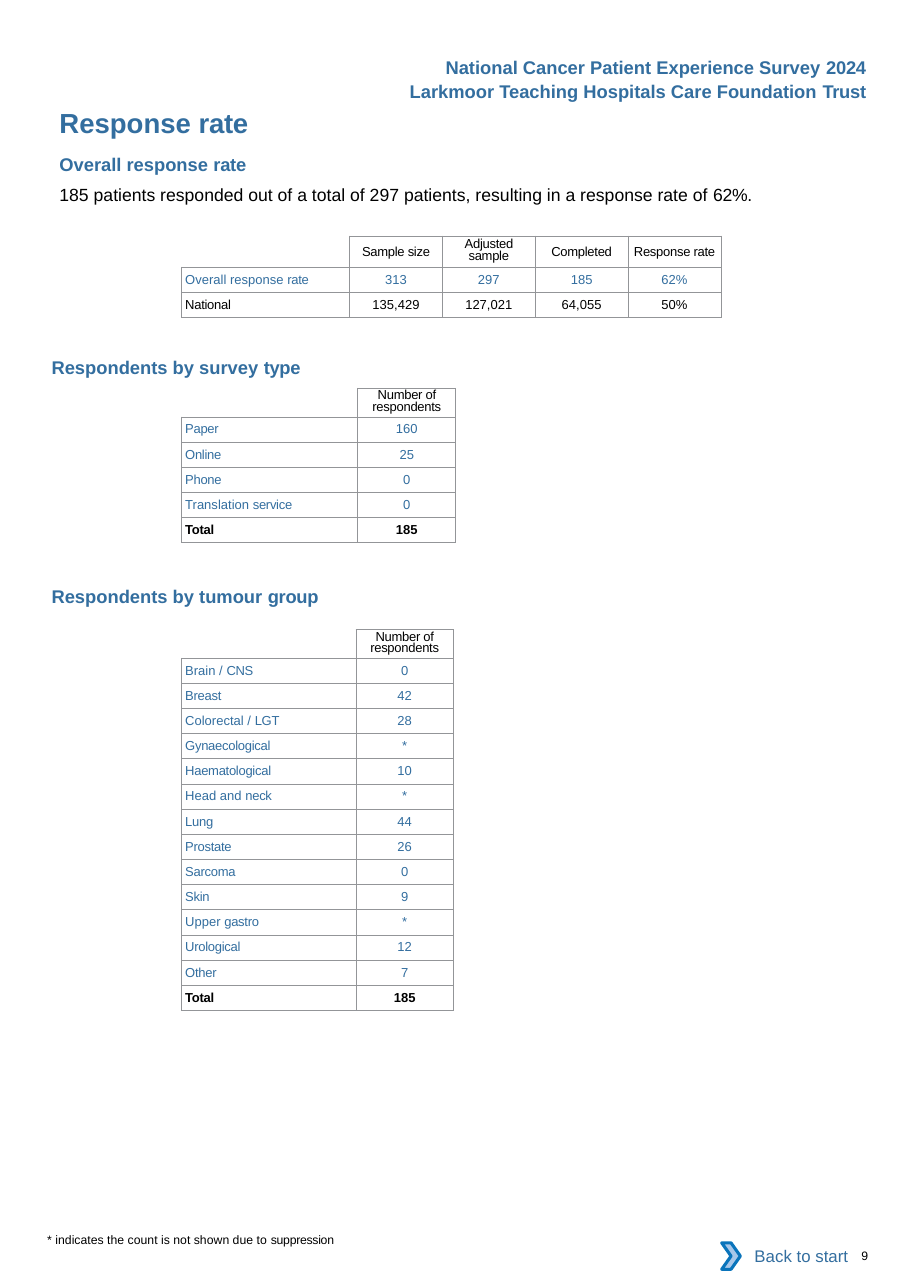
from dataclasses import dataclass, replace

from lxml.etree import SubElement
from pptx import Presentation
from pptx.dml.color import RGBColor
from pptx.enum.shapes import MSO_SHAPE as Preset
from pptx.enum.text import MSO_ANCHOR as Anchor, PP_ALIGN as Align
from pptx.oxml.ns import qn
from pptx.util import Cm, Pt

BLUE = RGBColor(0x33, 0x6E, 0x9F)
BLACK = RGBColor(0x00, 0x00, 0x00)
WHITE = RGBColor(0xFF, 0xFF, 0xFF)
BORDER_GREY = RGBColor(0x93, 0x95, 0x98)
CHEVRON_FILL = RGBColor(0xA8, 0xC7, 0xE9)
CHEVRON_LINE = RGBColor(0x0A, 0x74, 0xBB)

FONT = "Arial"
TIGHT = -20  # hundredths of a point
TABLE_LEFT = 4.19
ROW_HEIGHT = 0.58


@dataclass(frozen=True)
class Style:
    size: float
    color: RGBColor = BLACK
    bold: bool = False


TITLE = Style(18, BLUE, True)
HEADING = Style(12, BLUE, True)
SENTENCE = Style(11.5)
SMALL = Style(8)
LINK = Style(11, BLUE)
CELL = Style(8.5)
TRUST_CELL = replace(CELL, color=BLUE)
TOTAL_CELL = replace(CELL, bold=True)

OVERALL_HEADER = ["Sample size", "Adjusted sample", "Completed", "Response rate"]
OVERALL_ROWS = [
    (TRUST_CELL, "Overall response rate", "313", "297", "185", "62%"),
    (CELL, "National", "135,429", "127,021", "64,055", "50%"),
]
COUNT_HEADER = ["Number of respondents"]
TWO_LINE_HEADERS = {"Adjusted sample", "Number of respondents"}
SURVEY_TYPES = [
    ("Paper", "160"), ("Online", "25"), ("Phone", "0"), ("Translation service", "0"),
]
TUMOUR_GROUPS = [
    ("Brain / CNS", "0"), ("Breast", "42"), ("Colorectal / LGT", "28"),
    ("Gynaecological", "*"), ("Haematological", "10"), ("Head and neck", "*"),
    ("Lung", "44"), ("Prostate", "26"), ("Sarcoma", "0"), ("Skin", "9"),
    ("Upper gastro", "*"), ("Urological", "12"), ("Other", "7"),
]


def add_span(para, text, style, spacing=0):
    span = para.add_run()
    span.text = text
    span.font.name = FONT
    span.font.size = Pt(style.size)
    span.font.bold = style.bold
    span.font.color.rgb = style.color
    if spacing:
        span.font._element.set("spc", str(spacing))


def add_label(para, text, style):
    """Add text whose last word is set slightly tighter."""
    start, space, last_word = text.rpartition(" ")
    if start:
        add_span(para, start + space, style)
    add_span(para, last_word, style, TIGHT)


def clear_margins(holder):
    holder.margin_left = holder.margin_right = 0
    holder.margin_top = holder.margin_bottom = 0


def add_text(page, left, top, width, height, text, style):
    box = page.shapes.add_textbox(Cm(left), Cm(top), Cm(width), Cm(height))
    frame = box.text_frame
    frame.word_wrap = True
    clear_margins(frame)
    add_label(frame.paragraphs[0], text, style)


def add_title(page, text):
    title = page.shapes.title
    title.left, title.top = Cm(1.37), Cm(2.44)
    title.width, title.height = Cm(10.46), Cm(0.76)
    frame = title.text_frame
    frame.vertical_anchor = Anchor.TOP
    clear_margins(frame)
    para = frame.paragraphs[0]
    para.alignment = Align.LEFT
    add_label(para, text, TITLE)


def add_report_line(page, left, top, text):
    """Add a right-aligned line at the head of the page."""
    box = page.shapes.add_textbox(Cm(left), Cm(top), Cm(20.22 - left), Cm(0.76))
    box.text_frame.word_wrap = True
    para = box.text_frame.paragraphs[0]
    para.alignment = Align.RIGHT
    add_label(para, text, HEADING)


def set_borders(cell, visible="LRTB"):
    properties = cell._tc.get_or_add_tcPr()
    for position, side in enumerate("LRTB"):
        line = properties.makeelement(qn(f"a:ln{side}"), {"w": str(Pt(0.5))})
        if side in visible:
            fill = SubElement(line, qn("a:solidFill"))
            SubElement(fill, qn("a:srgbClr"), val=str(BORDER_GREY))
        else:
            SubElement(line, qn("a:noFill"))
        properties.insert(position, line)


def format_corner(cell):
    set_borders(cell, "RB")
    SubElement(cell.text_frame.paragraphs[0]._p, qn("a:endParaRPr"), sz="800")


def fill_header(cell, text):
    para = cell.text_frame.paragraphs[0]
    para.alignment = Align.CENTER
    if text in TWO_LINE_HEADERS:
        cell.margin_left = cell.margin_right = Cm(0.25)
        para.line_spacing = Pt(7.6)
    add_span(para, text, CELL, TIGHT)
    set_borders(cell)


def fill_row(cells, style, label, *values):
    cells[0].margin_left = Cm(0.08)
    add_label(cells[0].text_frame.paragraphs[0], label, style)
    for cell, value in zip(cells[1:], values):
        para = cell.text_frame.paragraphs[0]
        para.alignment = Align.CENTER
        add_span(para, value, style)
    for cell in cells:
        set_borders(cell)


def add_rate_table(page, top, widths, header_height, header, rows):
    heights = [header_height] + [ROW_HEIGHT] * len(rows)
    table = page.shapes.add_table(
        len(heights), len(widths), Cm(TABLE_LEFT), Cm(top),
        Cm(sum(widths)), Cm(sum(heights))).table
    table.first_row = table.horz_banding = False
    for column, width in zip(table.columns, widths):
        column.width = Cm(width)
    for row, height in zip(table.rows, heights):
        row.height = Cm(height)
    for cell in table.iter_cells():
        clear_margins(cell)
        cell.vertical_anchor = Anchor.MIDDLE
        cell.fill.background()
    format_corner(table.cell(0, 0))
    for column, text in enumerate(header, start=1):
        fill_header(table.cell(0, column), text)
    for index, content in enumerate(rows, start=1):
        fill_row(list(table.rows[index].cells), *content)


def add_count_table(page, top, widths, counts):
    rows = [(TRUST_CELL, *count) for count in counts]
    rows.append((TOTAL_CELL, "Total", "185"))
    add_rate_table(page, top, widths, 0.66, COUNT_HEADER, rows)


def add_preset(group, preset, left, top, width, height, color):
    shape = group.shapes.add_shape(preset, Cm(left), Cm(top), Cm(width), Cm(height))
    shape.shadow.inherit = False
    shape.fill.solid()
    shape.fill.fore_color.rgb = color
    return shape


def add_back_button(page):
    group = page.shapes.add_group_shape()
    button = add_preset(group, Preset.RECTANGLE, 16.81, 28.42, 3, 1.07, WHITE)
    button.line.fill.background()
    button.text_frame.vertical_anchor = Anchor.MIDDLE
    para = button.text_frame.paragraphs[0]
    para.alignment = Align.RIGHT
    add_span(para, "Back to start", LINK)
    chevron = add_preset(group, Preset.CHEVRON, 16.64, 28.65, 0.43, 0.61, CHEVRON_FILL)
    chevron.line.color.rgb = CHEVRON_LINE
    chevron.line.width = Pt(2)


def main():
    deck = Presentation()
    deck.slide_width, deck.slide_height = Cm(20.98), Cm(29.69)
    page = deck.slides.add_slide(deck.slide_layouts.get_by_name("Title Only"))

    add_report_line(page, 9.86, 1.17, "National Cancer Patient Experience Survey 2024")
    add_report_line(page, 8.94, 1.73, "Larkmoor Teaching Hospitals Care Foundation Trust")
    add_title(page, "Response rate")

    add_text(page, 1.37, 3.53, 10.46, 0.51, "Overall response rate", HEADING)
    add_text(page, 1.37, 4.24, 18.29, 0.48,
             "185 patients responded out of a total of 297 patients, "
             "resulting in a response rate of 62%.", SENTENCE)
    add_rate_table(page, 5.44, [3.87] + [2.14] * 4, 0.72, OVERALL_HEADER, OVERALL_ROWS)

    add_text(page, 1.19, 8.2, 5.84, 0.51, "Respondents by survey type", HEADING)
    add_count_table(page, 8.95, [4.06, 2.26], SURVEY_TYPES)

    add_text(page, 1.19, 13.49, 6.25, 0.51, "Respondents by tumour group", HEADING)
    add_count_table(page, 14.51, [4.02, 2.24], TUMOUR_GROUPS)

    add_text(page, 1.09, 28.4, 6.73, 0.33,
             "* indicates the count is not shown due to suppression", SMALL)
    add_back_button(page)
    add_text(page, 19.86, 28.78, 1.05, 0.33, "9", SMALL)
    deck.save("out.pptx")


if __name__ == "__main__":
    main()
